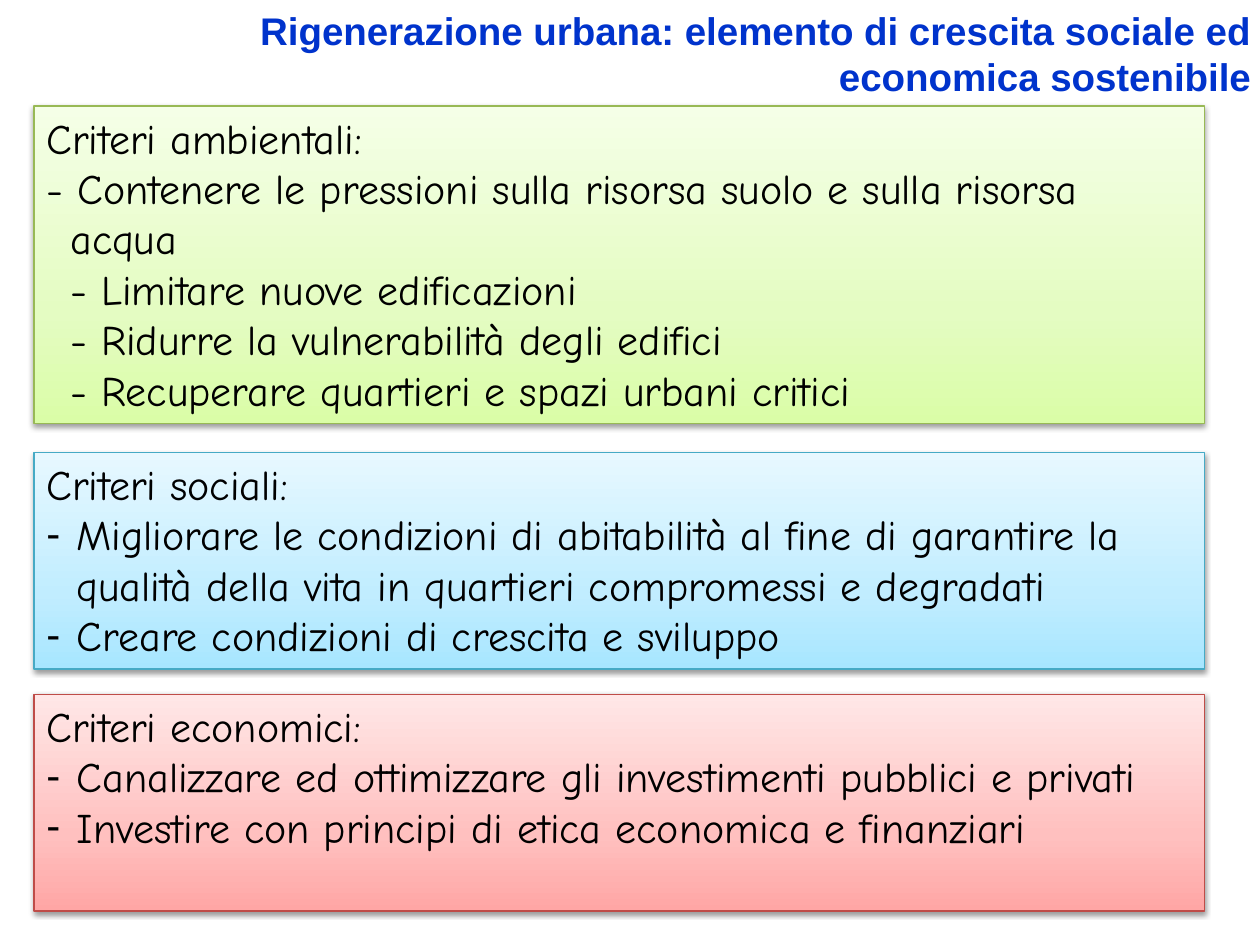
import copy

import pptx
import pptx.dml.color
import pptx.enum.shapes
import pptx.enum.text
import pptx.oxml
import pptx.oxml.ns
import pptx.util
from lxml import etree

WIDTH, HEIGHT = pptx.util.Inches(10), pptx.util.Inches(7.5)
COLORS = {"title": "0033CC", "text": "000000", "shadow": "000000"}
THEMES = {
    "green": {"stops": ("DAFDA7", "E4FCC2", "F5FFE7"), "line": "98B955"},
    "blue": {"stops": ("A7E6FF", "C1EDFF", "E7F8FF"), "line": "46AAC5"},
    "red": {"stops": ("FFA6A5", "FFC0BF", "FFE7E7"), "line": "BF4C48"},
}
STOP_POSITIONS = (0, 0.35, 1)
# kind: left margin, first-line indent (inches), bullet character
KINDS = {
    "heading": (0, 0, None),
    "hanging": (0.19, -0.19, None),
    "inner": (0.19, 0, None),
    "dash": (0.24, -0.24, "-"),
}
PANELS = [
    ("green", 0.84, 2.52, [
        ("heading", "Criteri ambientali:"),
        ("hanging", "- Contenere le pressioni sulla risorsa suolo e sulla risorsa acqua"),
        ("inner", "- Limitare nuove edificazioni"),
        ("inner", "- Ridurre la vulnerabilità degli edifici"),
        ("inner", "- Recuperare quartieri e spazi urbani critici"),
    ]),
    ("blue", 3.59, 1.72, [
        ("heading", "Criteri sociali:"),
        ("dash", "Migliorare le condizioni di abitabilità al fine di garantire la "
                 "qualità della vita in quartieri compromessi e degradati"),
        ("dash", "Creare condizioni di crescita e sviluppo"),
    ]),
    ("red", 5.51, 1.72, [
        ("heading", "Criteri economici:"),
        ("dash", "Canalizzare ed ottimizzare gli investimenti pubblici e privati"),
        ("dash", "Investire con principi di etica economica e finanziari"),
    ]),
]


def rgb(value):
    """Return a colour object for a hex string."""
    return pptx.dml.color.RGBColor.from_string(value)


def share(left, top, width, height):
    """Turn shares of the slide's size into a box of lengths."""
    return [round(part * size) for part, size in
            zip((left, top, width, height), (WIDTH, HEIGHT) * 2)]


def style_font(font, name, size, color, bold=False):
    """Set the typeface, size, colour and weight of a font."""
    font.name, font.size, font.bold = name, pptx.util.Pt(size), bold
    font.color.rgb = rgb(color)


def add_title(page, box, text):
    """Place and format the title placeholder in the given box."""
    title = page.shapes.title
    title.left, title.top, title.width, title.height = box
    frame = title.text_frame
    frame.text = text
    frame.word_wrap = True
    frame.auto_size = pptx.enum.text.MSO_AUTO_SIZE.NONE
    frame.vertical_anchor = pptx.enum.text.MSO_ANCHOR.MIDDLE
    frame.margin_left = frame.margin_right = pptx.util.Inches(0.07)
    frame.margin_top = frame.margin_bottom = pptx.util.Inches(0.04)
    para = frame.paragraphs[0]
    para.alignment = pptx.enum.text.PP_ALIGN.RIGHT
    style_font(para.runs[0].font, "Arial", 22, COLORS["title"], True)


def paint_panel(panel, theme):
    """Give a panel its three-stop gradient, outline and soft shadow."""
    panel.fill.gradient()
    panel.fill.gradient_angle = 90
    stop_list = panel.fill._fill._gradFill.gsLst
    stop_list.insert(1, copy.deepcopy(stop_list[0]))
    for stop, position, color in zip(panel.fill.gradient_stops, STOP_POSITIONS, theme["stops"]):
        stop.position = position
        stop.color.rgb = rgb(color)
    panel.line.color.rgb = rgb(theme["line"])
    panel.line.width = pptx.util.Pt(0.75)
    panel.shadow.inherit = False
    effects = panel._element.spPr.find(pptx.oxml.ns.qn("a:effectLst"))
    shadow = etree.SubElement(
        effects, pptx.oxml.ns.qn("a:outerShdw"), blurRad=str(pptx.util.Pt(3.1)),
        dist=str(pptx.util.Pt(1.6)), dir="5400000", rotWithShape="0")
    color = etree.SubElement(shadow, pptx.oxml.ns.qn("a:srgbClr"), val=COLORS["shadow"])
    etree.SubElement(color, pptx.oxml.ns.qn("a:alpha"), val="38000")


def write_line(para, kind, text):
    """Fill one paragraph with the indent and bullet of its kind."""
    margin, indent, bullet = KINDS[kind]
    para.text = text
    para.alignment = pptx.enum.text.PP_ALIGN.LEFT
    properties = para._p.get_or_add_pPr()
    properties.set("marL", str(pptx.util.Inches(margin)))
    properties.set("indent", str(pptx.util.Inches(indent)))
    if bullet:
        etree.SubElement(properties, pptx.oxml.ns.qn("a:buFont"), typeface="Arial")
        etree.SubElement(properties, pptx.oxml.ns.qn("a:buChar"), char=bullet)
    style_font(para.runs[0].font, "Comic Neue", 24, COLORS["text"])


def add_panel(page, box, theme, lines):
    """Add one coloured panel of criteria in the given box."""
    panel = page.shapes.add_shape(pptx.enum.shapes.MSO_SHAPE.RECTANGLE, *box)
    paint_panel(panel, theme)
    frame = panel.text_frame
    frame.word_wrap = True
    frame.vertical_anchor = pptx.enum.text.MSO_ANCHOR.TOP
    for index, (kind, text) in enumerate(lines):
        para = frame.add_paragraph() if index else frame.paragraphs[0]
        write_line(para, kind, text)


def main():
    """Build the slide and save the deck."""
    deck = pptx.Presentation()
    deck.slide_width, deck.slide_height = WIDTH, HEIGHT
    page = deck.slides.add_slide(deck.slide_layouts[5])
    add_title(page, share(0.075, 0, 0.925, 0.84 / 7.5),
              "Rigenerazione urbana: elemento di crescita sociale ed economica sostenibile")
    for theme, top, height, lines in PANELS:
        add_panel(page, share(0.027, top / 7.5, 0.929, height / 7.5), THEMES[theme], lines)
    deck.save("out.pptx")


if __name__ == "__main__":
    main()
